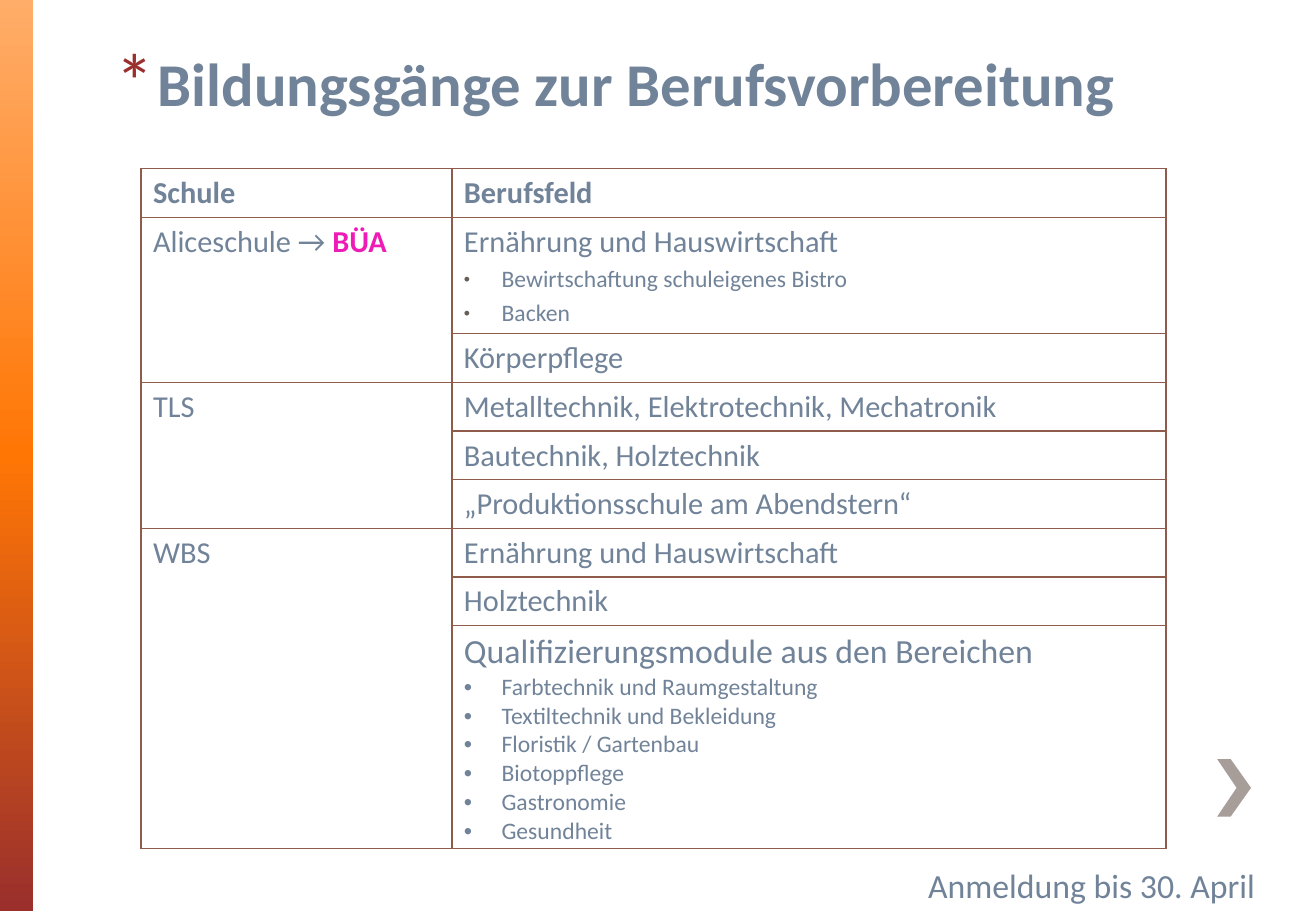
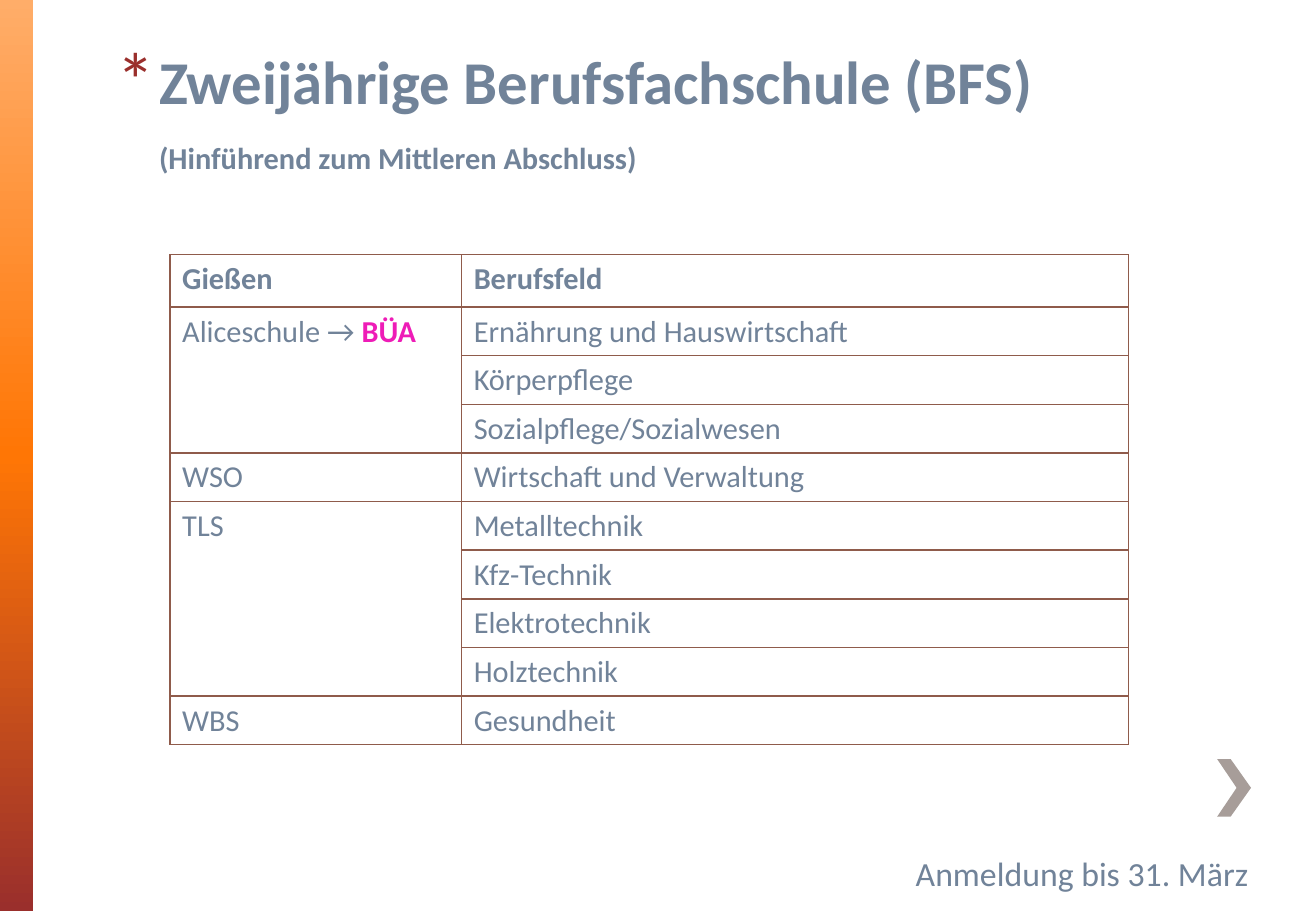
from lxml import etree
from pptx import Presentation
from pptx.dml.color import RGBColor
from pptx.enum import shapes
from pptx.oxml import ns
from pptx.util import Pt

# Theme
THEME = {
    "font": "Calibri",
    "text": "718399", "accent": "EE1CB7", "star": "9A2F2C",
    "dot": "675D59", "border": "8F5B4B", "chevron": "A79D99",
    "band": [(0, "FFAD69"), (50, "FF7605"), (100, "9A2F2C")],
    "title": 36, "body": 18, "large": 20, "small": 14,
}
ROW_HEIGHT = 28.8
TITLE_INDENT, LIST_INDENT = 25.2, 22.3
CHEVRON = [(729.5, 450), (721.5, 450), (733, 467),
           (721.5, 484), (729.5, 484), (741.5, 467)]

# Content: a field is plain text or a dict with a bullet list
BISTRO = {
    "head": "Ernährung und Hauswirtschaft", "size": THEME["body"],
    "items": ["Bewirtschaftung schuleigenes Bistro", "Backen"],
    "height": 69, "before": 2.8, "bullet": {"color": THEME["dot"], "percent": 75},
}
MODULES = {
    "head": "Qualifizierungsmodule aus den Bereichen", "size": THEME["large"],
    "items": ["Farbtechnik und Raumgestaltung", "Textiltechnik und Bekleidung",
              "Floristik / Gartenbau", "Biotoppflege", "Gastronomie", "Gesundheit"],
    "height": 131.8, "before": 0, "bullet": {},
}
ALICE = ("Aliceschule → ", "BÜA")
SLIDES = [
    {
        "title": "Bildungsgänge zur Berufsvorbereitung", "subtitle": None,
        "title_box": (61.2, 28.5, 646.5, 100),
        "header": ("Schule", "Berufsfeld"), "header_height": ROW_HEIGHT,
        "table_at": (83.5, 100), "columns": (184.3, 423.4),
        "groups": [
            (ALICE, [BISTRO, "Körperpflege"]),
            (("TLS",), ["Metalltechnik, Elektrotechnik, Mechatronik",
                        "Bautechnik, Holztechnik",
                        "„Produktionsschule am Abendstern“"]),
            (("WBS",), ["Ernährung und Hauswirtschaft", "Holztechnik", MODULES]),
        ],
        "deadline": "Anmeldung bis 30. April", "deadline_box": (543, 509, 232, 31),
    },
    {
        "title": "Zweijährige Berufsfachschule (BFS)",
        "subtitle": "(Hinführend zum Mittleren Abschluss)",
        "title_box": (62, 27.5, 672.5, 60),
        "header": ("Gießen", "Berufsfeld"), "header_height": 31,
        "table_at": (100.8, 151), "columns": (172.8, 395.3),
        "groups": [
            (ALICE, ["Ernährung und Hauswirtschaft", "Körperpflege",
                     "Sozialpflege/Sozialwesen"]),
            (("WSO",), ["Wirtschaft und Verwaltung"]),
            (("TLS",), ["Metalltechnik", "Kfz-Technik", "Elektrotechnik", "Holztechnik"]),
            (("WBS",), ["Gesundheit"]),
        ],
        "deadline": "Anmeldung bis 31. März", "deadline_box": (535.7, 502, 234.7, 31),
    },
]


# Text helpers
def sub(parent, tag, **attrs):
    el = etree.SubElement(parent, ns.qn(tag))
    for name, value in attrs.items():
        el.set(name, str(value))
    return el


def add_run(p, content, size=THEME["body"], color=THEME["text"], bold=False):
    r = p.add_run()
    r.text = content
    for name, value in {"name": THEME["font"], "size": Pt(size), "bold": bold}.items():
        setattr(r.font, name, value)
    r.font.color.rgb = RGBColor.from_string(color)


def set_indent(p, left, first):
    ppr = p._p.get_or_add_pPr()
    ppr.set("marL", str(Pt(left)))
    ppr.set("indent", str(Pt(first)))
    return ppr


def set_bullet(p, indent, char="•", color=None, percent=100):
    ppr = set_indent(p, indent, -indent)
    if color:
        sub(sub(ppr, "a:buClr"), "a:srgbClr", val=color)
    sub(ppr, "a:buSzPct", val=percent * 1000)
    sub(ppr, "a:buFont", typeface="Arial" if char == "•" else THEME["font"])
    sub(ppr, "a:buChar", char=char)


def add_textbox(s, box):
    tf = s.shapes.add_textbox(*map(Pt, box)).text_frame
    tf.word_wrap = True
    return tf


# Shared decoration
def add_decoration(s, prs):
    band = s.shapes.add_shape(shapes.MSO_SHAPE.RECTANGLE, 0, 0, Pt(19.5), prs.slide_height)
    band.fill.gradient()
    grad = band._element.spPr.find(ns.qn("a:gradFill"))
    for child in list(grad):
        grad.remove(child)
    stops = sub(grad, "a:gsLst")
    for position, color in THEME["band"]:
        sub(sub(stops, "a:gs", pos=position * 1000), "a:srgbClr", val=color)
    sub(grad, "a:lin", ang=90 * 60000, scaled=0)

    points = [(Pt(x), Pt(y)) for x, y in CHEVRON]
    builder = s.shapes.build_freeform(*points[0])
    builder.add_line_segments(points[1:], close=True)
    chevron = builder.convert_to_shape()
    chevron.fill.solid()
    chevron.fill.fore_color.rgb = RGBColor.from_string(THEME["chevron"])
    for sp in (band, chevron):
        sp.line.fill.background()
        sp.shadow.inherit = False


def add_title(s, data):
    tf = add_textbox(s, data["title_box"])
    p = tf.paragraphs[0]
    p.line_spacing = 0.9
    set_bullet(p, TITLE_INDENT, "*", THEME["star"], 128)
    add_run(p, data["title"], THEME["title"], bold=True)
    if data["subtitle"]:
        p = tf.add_paragraph()
        p.line_spacing, p.space_before = 0.9, Pt(15)
        set_indent(p, TITLE_INDENT, 0)
        add_run(p, data["subtitle"], bold=True)


# Table
def style_cell(cell):
    cell.fill.background()
    tcpr = cell._tc.get_or_add_tcPr()
    for i, side in enumerate(("a:lnL", "a:lnR", "a:lnT", "a:lnB")):
        ln = sub(tcpr, side, w=Pt(1))
        sub(sub(ln, "a:solidFill"), "a:srgbClr", val=THEME["border"])
        tcpr.insert(i, ln)


def fill_field(cell, field):
    tf = cell.text_frame
    if isinstance(field, str):
        add_run(tf.paragraphs[0], field)
        return
    add_run(tf.paragraphs[0], field["head"], field["size"])
    for item in field["items"]:
        p = tf.add_paragraph()
        p.space_before = Pt(field["before"])
        set_bullet(p, LIST_INDENT, **field["bullet"])
        add_run(p, item, THEME["small"])


def add_school_table(s, data):
    fields = [field for _, group in data["groups"] for field in group]
    heights = [data["header_height"]] + [
        ROW_HEIGHT if isinstance(field, str) else field["height"] for field in fields]
    size = (sum(data["columns"]), sum(heights))
    table = s.shapes.add_table(len(heights), 2, *map(Pt, data["table_at"] + size)).table
    table.first_row = table.horz_banding = False
    for column, width in zip(table.columns, data["columns"]):
        column.width = Pt(width)
    for row, height in zip(table.rows, heights):
        row.height = Pt(height)
    for cell in table.iter_cells():
        style_cell(cell)

    for col, label in enumerate(data["header"]):
        add_run(table.cell(0, col).text_frame.paragraphs[0], label, bold=True)
    top = 1
    for (school, *tag), group in data["groups"]:
        cell = table.cell(top, 0)
        if len(group) > 1:
            cell.merge(table.cell(top + len(group) - 1, 0))
        p = cell.text_frame.paragraphs[0]
        add_run(p, school)
        for label in tag:
            add_run(p, label, color=THEME["accent"], bold=True)
        for row, field in enumerate(group, top):
            fill_field(table.cell(row, 1), field)
        top += len(group)


def main():
    prs = Presentation()
    prs.slide_width, prs.slide_height = Pt(780), Pt(540)
    for data in SLIDES:
        s = prs.slides.add_slide(prs.slide_layouts[6])
        add_decoration(s, prs)
        tf = add_textbox(s, data["deadline_box"])
        add_run(tf.paragraphs[0], data["deadline"], THEME["large"])
        add_school_table(s, data)
        add_title(s, data)
    prs.save("out.pptx")


if __name__ == "__main__":
    main()
